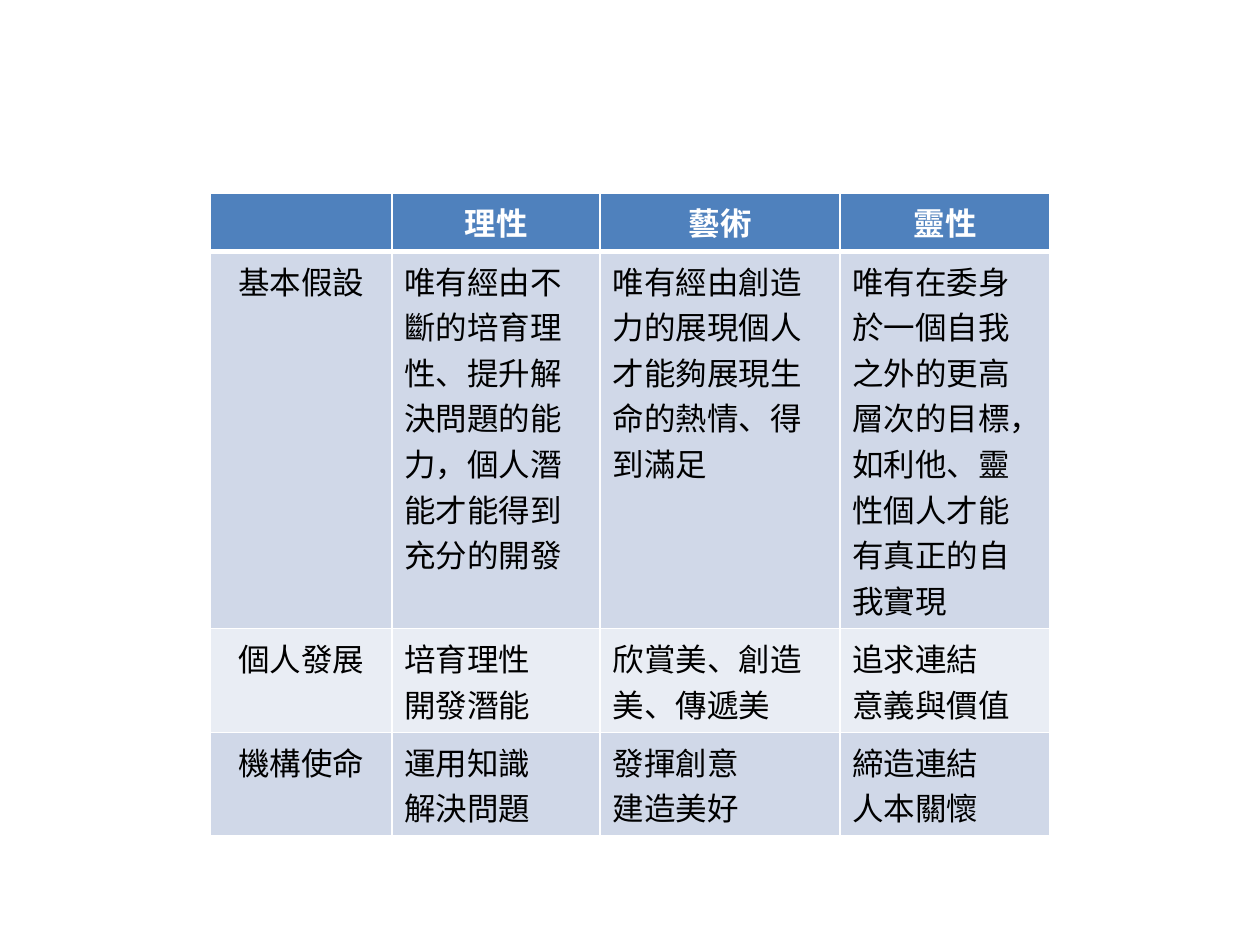
import pptx
import pptx.util
import pptx.dml.color
import pptx.enum.text
import pptx.oxml
import pptx.oxml.ns
from pptx.util import Cm

THEME = {
    "font": "Calibri",
    "size": 18,
    "head": "4F81BD",
    "bands": ["D0D8E8", "E9EDF4"],
    "line": "FFFFFF",
    "light": "FFFFFF",
    "dark": "000000",
    "thin": 1,
    "thick": 3,
}

# Table content: the first row is the header, line breaks part paragraphs
ROWS = [
    ["", "理性", "藝術", "靈性"],
    ["基本假設",
     "唯有經由不斷的培育理性、提升解決問題的能力，個人潛能才能得到充分的開發",
     "唯有經由創造力的展現個人才能夠展現生命的熱情、得到滿足",
     "唯有在委身於一個自我之外的更高層次的目標，如利他、靈性個人才能有真正的自我實現"],
    ["個人發展", "培育理性\n開發潛能", "欣賞美、創造美、傳遞美", "追求連結\n意義與價值"],
    ["機構使命", "運用知識\n解決問題", "發揮創意\n建造美好", "締造連結\n人本關懷"],
]
WIDTHS = [3.66, 4.2, 4.83, 4.24]


def color(code):
    return pptx.dml.color.RGBColor.from_string(code)


def border(cell, side, width):
    line = pptx.oxml.parse_xml(
        f'<a:{side} {pptx.oxml.ns.nsdecls("a")} w="{pptx.util.Pt(width)}">'
        f'<a:solidFill><a:srgbClr val="{THEME["line"]}"/></a:solidFill></a:{side}>')
    cell._tc.get_or_add_tcPr().append(line)


# Slide
deck = pptx.Presentation()
deck.slide_width, deck.slide_height = Cm(25.4), Cm(19.05)
slide = deck.slides.add_slide(deck.slide_layouts[6])

# Table frame; rows grow to fit their text
frame = slide.shapes.add_table(len(ROWS), len(WIDTHS), Cm(4.24), Cm(3.89),
                               Cm(sum(WIDTHS)), Cm(10.95))
table = frame.table
for col, width in zip(table.columns, WIDTHS):
    col.width = Cm(width)
for row in table.rows:
    row.height = Cm(1.03)
frame.height = Cm(10.95)

# Cells
for r, texts in enumerate(ROWS):
    head = r == 0
    for c, text in enumerate(texts):
        cell = table.cell(r, c)
        for side in ("lnL", "lnR", "lnT", "lnB"):
            rule = (r, side) in ((0, "lnB"), (1, "lnT"))
            border(cell, side, THEME["thick" if rule else "thin"])
        cell.fill.solid()
        cell.fill.fore_color.rgb = color(THEME["head"] if head else THEME["bands"][(r - 1) % 2])
        cell.text = text
        for para in cell.text_frame.paragraphs:
            if head or c == 0:
                para.alignment = pptx.enum.text.PP_ALIGN.CENTER
            para.font.name = THEME["font"]
            para.font.size = pptx.util.Pt(THEME["size"])
            para.font.bold = head
            para.font.color.rgb = color(THEME["light" if head else "dark"])

deck.save("out.pptx")
